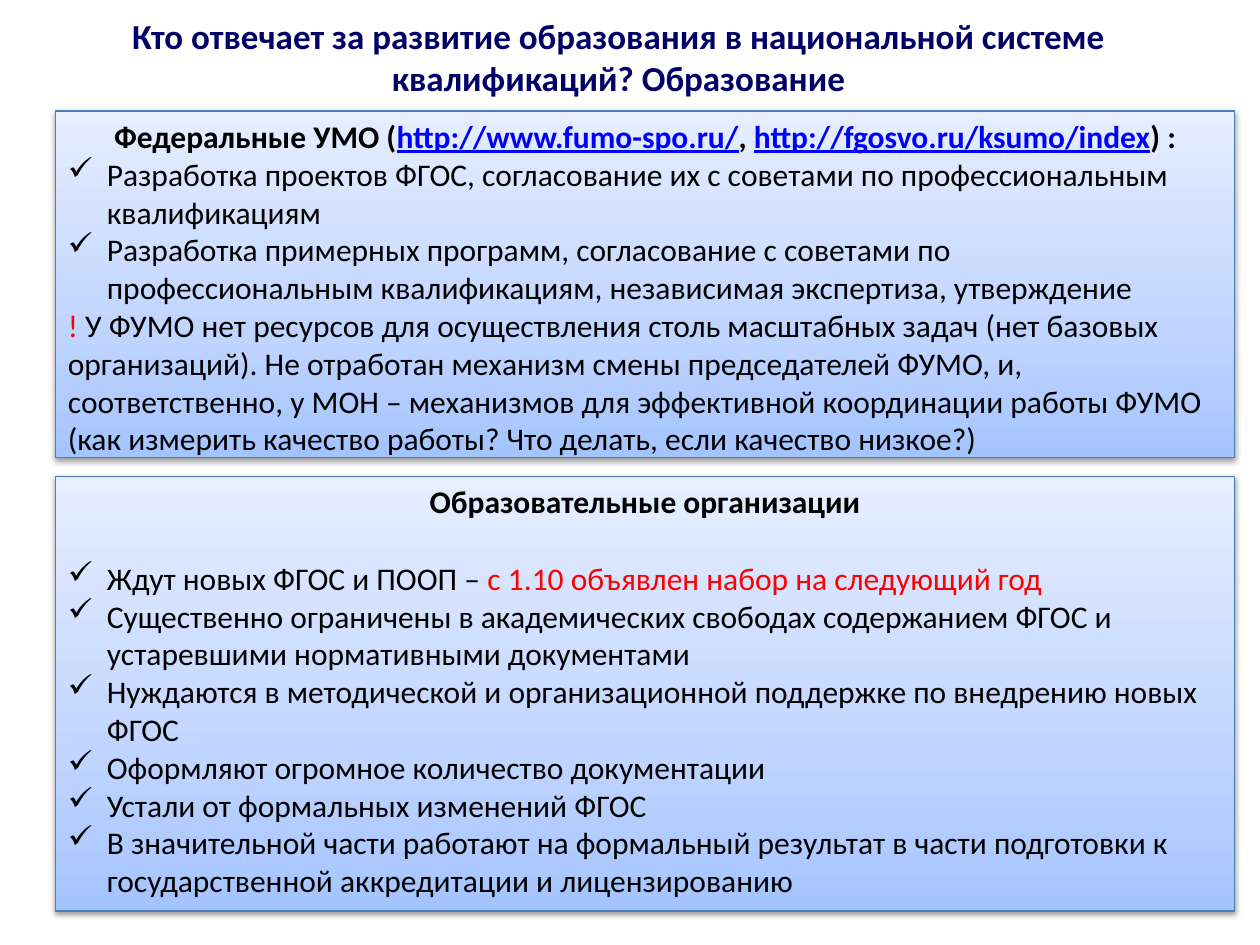
from copy import deepcopy

from lxml import etree
from pptx import Presentation, util as u
from pptx.dml.color import RGBColor
from pptx.enum import shapes, text
from pptx.oxml.ns import qn

SLIDE_W, SLIDE_H = 10, 7.5
PANEL_LEFT, PANEL_W = 0.44, 9.36
INDENT = 0.31
GRADIENT = [(0, "A4C4FF"), (0.35, "BFD4FF"), (1, "E6EEFF")]
NAVY, BLACK, RED, LINK = "000066", "000000", "FF0000", "0000FF"

UMO_HEADING = [
    ("Федеральные УМО (", BLACK),
    ("http://www.fumo-spo.ru/", LINK),
    (", ", BLACK),
    ("http://fgosvo.ru/ksumo/index", LINK),
    (") :", BLACK),
]
UMO_TASKS = [
    [("Разработка проектов ФГОС, согласование их с советами по "
      "профессиональным квалификациям", BLACK)],
    [("Разработка примерных программ, согласование с советами по "
      "профессиональным квалификациям, независимая экспертиза, утверждение", BLACK)],
]
UMO_WARNING = [
    ("! ", RED),
    ("У ФУМО нет ресурсов для осуществления столь масштабных задач (нет базовых "
     "организаций). Не отработан механизм смены председателей ФУМО, и, "
     "соответственно, у МОН – механизмов для эффективной координации работы ФУМО "
     "(как измерить качество работы? Что делать, если качество низкое?)", BLACK),
]
SCHOOLS_HEADING = [("Образовательные организации", BLACK)]
SCHOOLS_ISSUES = [
    [("Ждут новых ФГОС и ПООП – ", BLACK),
     ("с 1.10 объявлен набор на следующий год", RED)],
    [("Существенно ограничены в академических свободах содержанием ФГОС и "
      "устаревшими нормативными документами", BLACK)],
    [("Нуждаются в методической и организационной поддержке по внедрению "
      "новых ФГОС", BLACK)],
    [("Оформляют огромное количество документации", BLACK)],
    [("Устали от формальных изменений ФГОС", BLACK)],
    [("В значительной части работают на формальный результат в части подготовки "
      "к государственной аккредитации и лицензированию", BLACK)],
]


def rgb(value):
    return RGBColor.from_string(value)


def add_runs(paragraph, pieces, size=18, bold=False):
    for wording, color in pieces:
        run = paragraph.add_run()
        run.text = wording
        font = run.font
        font.name, font.size, font.bold = "Calibri", u.Pt(size), bold
        font.color.rgb = rgb(color)
        if color == LINK:
            font.underline = True


def add_check_mark(paragraph):
    """Give the paragraph a hanging check-mark bullet."""
    props = paragraph._p.get_or_add_pPr()
    props.set("marL", str(u.Inches(INDENT)))
    props.set("indent", str(-u.Inches(INDENT)))
    etree.SubElement(props, qn("a:buChar"), char="✓")


def fill_with_gradient(panel):
    panel.fill.gradient()
    panel.fill.gradient_angle = 90
    stop_list = panel._element.spPr.find(qn("a:gradFill")).find(qn("a:gsLst"))
    stop_list.append(deepcopy(stop_list[-1]))
    for stop, (position, color) in zip(panel.fill.gradient_stops, GRADIENT):
        stop.position = position
        stop.color.rgb = rgb(color)


def add_soft_shadow(panel):
    panel.shadow.inherit = False
    effects = panel._element.spPr.find(qn("a:effectLst"))
    shadow = etree.SubElement(
        effects, qn("a:outerShdw"), blurRad=str(u.Pt(3.1)), dist=str(u.Pt(1.6)),
        dir="5400000", rotWithShape="0")
    color = etree.SubElement(shadow, qn("a:srgbClr"), val=BLACK)
    etree.SubElement(color, qn("a:alpha"), val="38000")


def add_title(slide, wording):
    box = slide.shapes.add_textbox(
        u.Inches(0.19), u.Inches(0.02), u.Inches(9.44), u.Inches(0.86))
    frame = box.text_frame
    frame.word_wrap = True
    frame.vertical_anchor = text.MSO_ANCHOR.MIDDLE
    heading = frame.paragraphs[0]
    heading.alignment = text.PP_ALIGN.CENTER
    add_runs(heading, [(wording, NAVY)], size=20, bold=True)


def add_panel(slide, top, height, heading, items, closing=None, heading_gap=0):
    """Add a shaded panel: heading, check list and optional closing paragraph."""
    panel = slide.shapes.add_shape(
        shapes.MSO_SHAPE.RECTANGLE, u.Inches(PANEL_LEFT), u.Inches(top),
        u.Inches(PANEL_W), u.Inches(height))
    fill_with_gradient(panel)
    panel.line.color.rgb = rgb("4B7EBC")
    panel.line.width = u.Pt(0.75)
    add_soft_shadow(panel)

    frame = panel.text_frame
    frame.word_wrap = True
    frame.vertical_anchor = text.MSO_ANCHOR.TOP
    first = frame.paragraphs[0]
    first.alignment = text.PP_ALIGN.CENTER
    first.space_after = u.Pt(heading_gap)
    add_runs(first, heading, bold=True)
    for item in items:
        entry = frame.add_paragraph()
        entry.alignment = text.PP_ALIGN.LEFT
        add_check_mark(entry)
        add_runs(entry, item)
    if closing:
        remark = frame.add_paragraph()
        remark.alignment = text.PP_ALIGN.LEFT
        add_runs(remark, closing)


def main():
    deck = Presentation()
    deck.slide_width, deck.slide_height = u.Inches(SLIDE_W), u.Inches(SLIDE_H)
    slide = deck.slides.add_slide(deck.slide_layouts[6])
    add_title(slide, "Кто отвечает за развитие образования в национальной "
                     "системе квалификаций? Образование")
    add_panel(slide, 3.78, 3.45, SCHOOLS_HEADING, SCHOOLS_ISSUES, heading_gap=22)
    add_panel(slide, 0.88, 2.75, UMO_HEADING, UMO_TASKS, closing=UMO_WARNING)
    deck.save("out.pptx")


if __name__ == "__main__":
    main()
